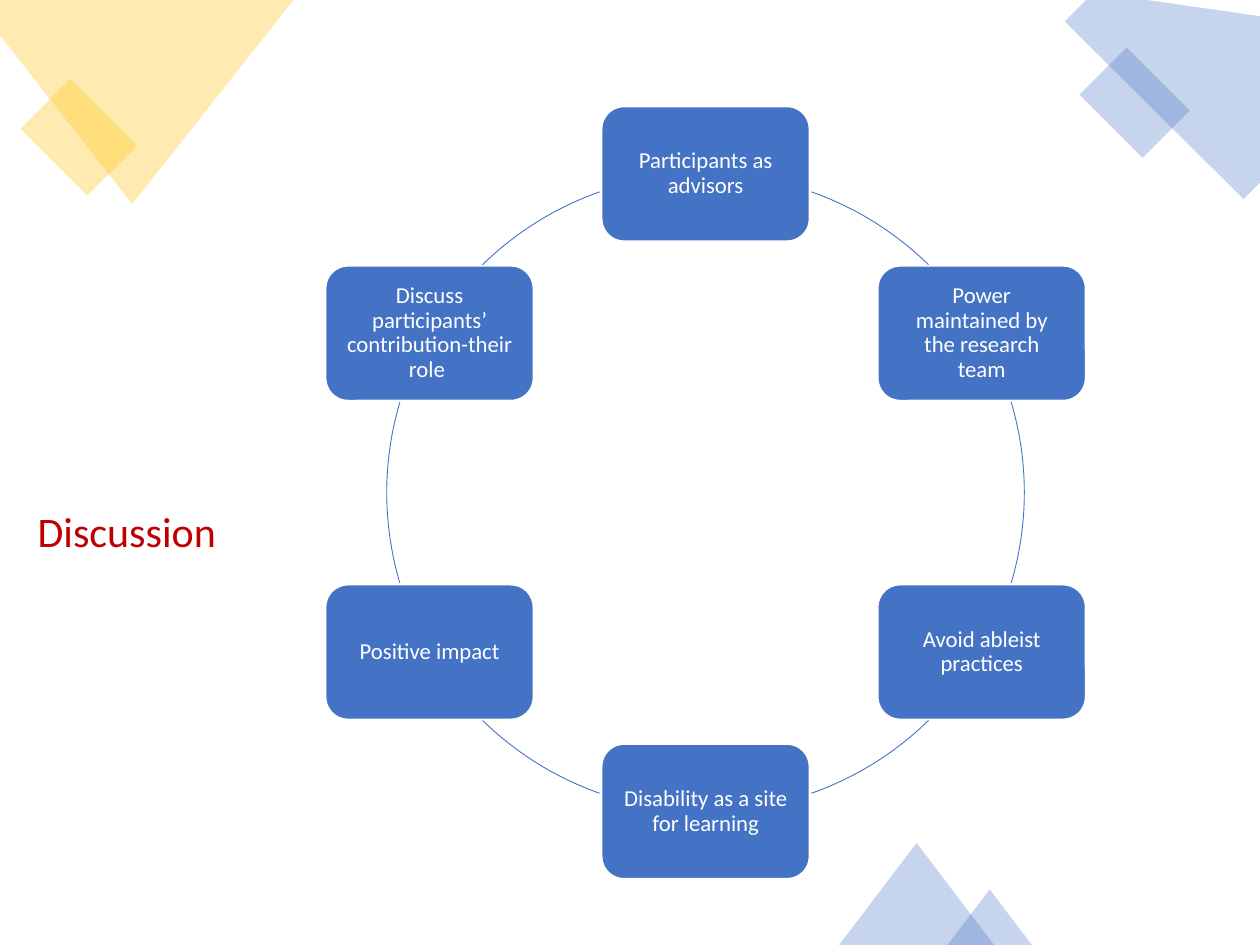
from math import cos, radians, sin

from lxml.etree import SubElement
from pptx import Presentation
from pptx.dml.color import RGBColor
from pptx.enum.shapes import MSO_SHAPE
from pptx.enum.text import MSO_ANCHOR, PP_ALIGN
from pptx.oxml.ns import qn
from pptx.util import Inches, Pt

COLORS = {"blue": "4472C4", "yellow": "FFC000", "red": "C00000", "white": "FFFFFF"}
FONT = "Calibri"
TOPICS = [
    "Participants as advisors",
    "Power maintained by the research team",
    "Avoid ableist practices",
    "Disability as a site for learning",
    "Positive impact",
    "Discuss participants’ contribution-their role ",
]
ARCS = [(-70.6, -45.6), (-16.5, 16.5), (45.6, 70.6),
        (109.4, 134.4), (163.5, 196.5), (225.6, 250.6)]


def rgb(name):
    """Return the named palette colour."""
    return RGBColor.from_string(COLORS[name])


def add_preset(slide, kind, left, top, width, height):
    """Add a preset shape without a shadow, measured in inches."""
    sp = slide.shapes.add_shape(
        kind, Inches(left), Inches(top), Inches(width), Inches(height))
    sp.shadow.inherit = False
    return sp


def tint(sp, color):
    """Fill a decoration with a 30% opaque colour and no outline."""
    sp.shadow.inherit = False
    sp.fill.solid()
    sp.fill.fore_color.rgb = rgb(color)
    sp.line.fill.background()
    clr = sp.fill._xPr.find(qn("a:solidFill"))[0]
    SubElement(clr, qn("a:alpha"), val="30000")


def write(tf, text, size, color, align):
    """Write one paragraph, vertically centred."""
    tf.word_wrap = True
    tf.vertical_anchor = MSO_ANCHOR.MIDDLE
    p = tf.paragraphs[0]
    p.text = text
    p.alignment = align
    p.line_spacing = 0.9
    p.font.name = FONT
    p.font.size = Pt(size)
    p.font.color.rgb = rgb(color)


def add_title(slide, left, top, width, height):
    """Place the slide title in its box."""
    tb = slide.shapes.add_textbox(
        Inches(left), Inches(top), Inches(width), Inches(height))
    tb.text_frame.margin_bottom = Inches(0.23)
    write(tb.text_frame, "Discussion", 24, "red", PP_ALIGN.LEFT)


def add_polygon(slide, points, color):
    """Add a tinted polygon through points in inches."""
    pts = [(Inches(x), Inches(y)) for x, y in points]
    fb = slide.shapes.build_freeform(*pts[0])
    fb.add_line_segments(pts[1:], close=True)
    tint(fb.convert_to_shape(), color)


def add_diamond(slide, left, top, width, height, color):
    """Add a tinted rectangle turned by 45 degrees."""
    sp = add_preset(slide, MSO_SHAPE.RECTANGLE, left, top, width, height)
    sp.rotation = 45
    tint(sp, color)


def add_corners(slide):
    """Decorate the two upper corners."""
    add_diamond(slide, 0.25, 0.81, 0.75, 0.56, "yellow")
    add_polygon(slide, [(0, 0), (2.33, 0), (1.05, 1.62), (0, 0.28)], "yellow")
    add_polygon(slide, [(8.68, -0.06), (10.01, 0.13), (10.18, 1.27),
                        (9.87, 1.58), (8.45, 0.17)], "blue")
    add_diamond(slide, 8.65, 0.55, 0.71, 0.53, "blue")


def add_peaks(slide, bottom):
    """Stand two triangles on the bottom edge."""
    for left, width, height in [(6.66, 1.23, 0.81), (7.52, 0.67, 0.44)]:
        tint(add_preset(slide, MSO_SHAPE.ISOSCELES_TRIANGLE,
                        left, bottom - height, width, height), "blue")


def add_node(slide, cx, cy, text, width=1.65, height=1.07):
    """Add a topic box centred on a point."""
    sp = add_preset(slide, MSO_SHAPE.ROUNDED_RECTANGLE,
                    cx - width / 2, cy - height / 2, width, height)
    sp.fill.solid()
    sp.fill.fore_color.rgb = rgb("blue")
    sp.line.color.rgb = rgb("white")
    sp.line.width = Pt(1)
    tf = sp.text_frame
    tf.margin_left = tf.margin_right = Inches(0.11)
    tf.margin_top = tf.margin_bottom = Inches(0.11)
    write(tf, text, 13, "white", PP_ALIGN.CENTER)


def add_cycle(slide, left, top, size):
    """Space the topics evenly on a ring, joined by arcs."""
    radius = size / 2
    for i, (text, (start, end)) in enumerate(zip(TOPICS, ARCS)):
        angle = radians(i * 360 / len(TOPICS) - 90)
        add_node(slide, left + radius * (1 + cos(angle)),
                 top + radius * (1 + sin(angle)), text)
        arc = add_preset(slide, MSO_SHAPE.ARC, left, top, size, size)
        arc.adjustments[0] = start % 360 * 0.6
        arc.adjustments[1] = end % 360 * 0.6
        arc.fill.background()
        arc.line.color.rgb = rgb("blue")
        arc.line.width = Pt(0.5)


def main():
    """Build and save the slide."""
    prs = Presentation()
    prs.slide_width, prs.slide_height = Inches(10), Inches(7.5)
    s = prs.slides.add_slide(prs.slide_layouts[6])
    add_title(s, 0.2, 1.86, 1.81, 4.94)
    add_corners(s)
    add_cycle(s, 3.07, 1.38, 5.06)
    add_peaks(s, 7.5)
    prs.save("out.pptx")


if __name__ == "__main__":
    main()
